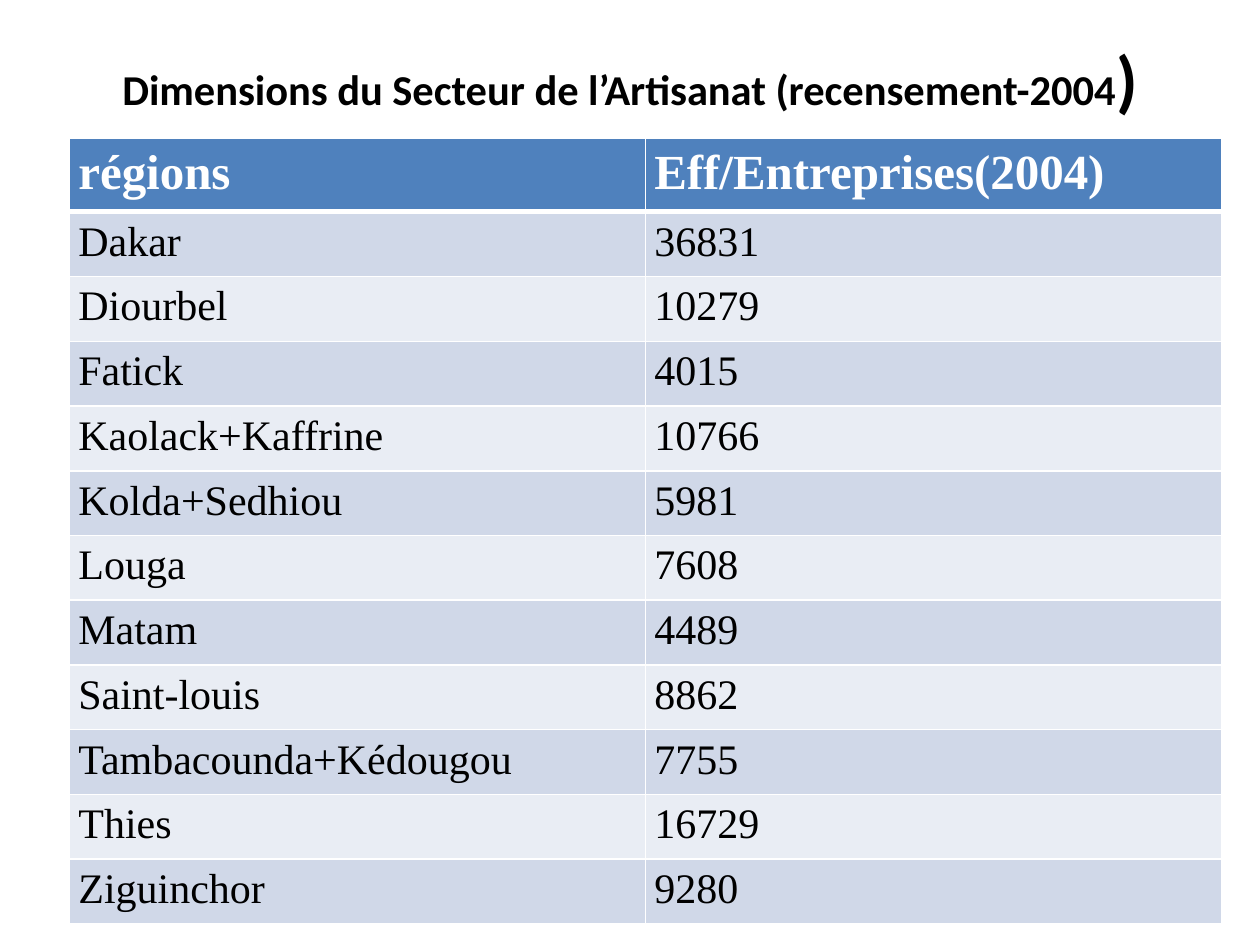
from lxml import etree
from pptx import Presentation
from pptx.dml.color import RGBColor
from pptx.enum.text import MSO_ANCHOR as ANCHOR, PP_ALIGN as ALIGN
from pptx.oxml.ns import qn
from pptx.util import Cm, Pt

COLORS = {
    "text": "000000",
    "header_text": "FFFFFF",
    "header": "4F81BD",
    "band_dark": "D0D8E8",
    "band_light": "E9EDF4",
    "border": "FFFFFF",
}

HEADINGS = ("régions", "Eff/Entreprises(2004)")
WORKSHOPS = [
    ("Dakar", 36831),
    ("Diourbel", 10279),
    ("Fatick", 4015),
    ("Kaolack+Kaffrine", 10766),
    ("Kolda+Sedhiou", 5981),
    ("Louga", 7608),
    ("Matam", 4489),
    ("Saint-louis", 8862),
    ("Tambacounda+Kédougou", 7755),
    ("Thies", 16729),
    ("Ziguinchor", 9280),
]


def add_text(p, text, *, font, size, color="text", bold=False):
    r = p.add_run()
    r.text = text
    r.font.name = font
    r.font.size = Pt(size)
    r.font.bold = bold
    r.font.color.rgb = RGBColor.from_string(COLORS[color])


def set_borders(cell, **widths):
    """Draw the cell's borders; widths are points by side: L, R, T, B."""
    tc_pr = cell._tc.get_or_add_tcPr()
    for side in "LRTB":
        ln = etree.SubElement(tc_pr, qn(f"a:ln{side}"), w=str(Pt(widths.get(side, 1))))
        fill = etree.SubElement(ln, qn("a:solidFill"))
        etree.SubElement(fill, qn("a:srgbClr"), val=COLORS["border"])


class SlideBuilder:
    title_font = "Calibri"
    table_font = "Times New Roman"
    cell_margin = Cm(0.18)
    line_spacing = 1.15

    def __init__(self, slide):
        self.slide = slide

    def title(self, runs, left, top, width, height):
        sp = self.slide.shapes.add_textbox(Cm(left), Cm(top), Cm(width), Cm(height))
        tf = sp.text_frame
        tf.word_wrap = True
        tf.vertical_anchor = ANCHOR.MIDDLE
        p = tf.paragraphs[0]
        p.alignment = ALIGN.CENTER
        for text, size in runs:
            add_text(p, text, font=self.title_font, size=size, bold=True)

    def table(self, rows, left, top, col_width, header_height, row_height):
        cols = len(rows[0])
        height = header_height + row_height * (len(rows) - 1)
        table = self.slide.shapes.add_table(
            len(rows), cols, Cm(left), Cm(top), Cm(col_width * cols), Cm(height)
        ).table
        for column in table.columns:
            column.width = Cm(col_width)
        for i, values in enumerate(rows):
            table.rows[i].height = Cm(row_height if i else header_height)
            for j, value in enumerate(values):
                self.cell(table.cell(i, j), str(value), i)

    def cell(self, cell, text, row):
        header = row == 0
        band = "header" if header else "band_dark" if row % 2 else "band_light"
        set_borders(cell, T=3 if row == 1 else 1, B=3 if header else 1)
        cell.fill.solid()
        cell.fill.fore_color.rgb = RGBColor.from_string(COLORS[band])
        cell.margin_left = cell.margin_right = self.cell_margin
        cell.margin_top = cell.margin_bottom = 0
        p = cell.text_frame.paragraphs[0]
        p.alignment = ALIGN.JUSTIFY
        p.line_spacing = self.line_spacing
        add_text(p, text, font=self.table_font, size=28 if header else 24,
                 color="header_text" if header else "text", bold=header)


def main():
    prs = Presentation()
    prs.slide_width, prs.slide_height = Cm(25.4), Cm(19.05)
    s = SlideBuilder(prs.slides.add_slide(prs.slide_layouts[6]))
    s.title(
        [("Dimensions du Secteur de l’Artisanat (recensement-2004", 24.3), (")", 39.6)],
        left=1.27, top=0.76, width=22.86, height=1.63,
    )
    s.table([HEADINGS, *WORKSHOPS], left=1.4, top=2.78, col_width=11.61,
            header_height=1.49, row_height=1.305)
    prs.save("out.pptx")


if __name__ == "__main__":
    main()
